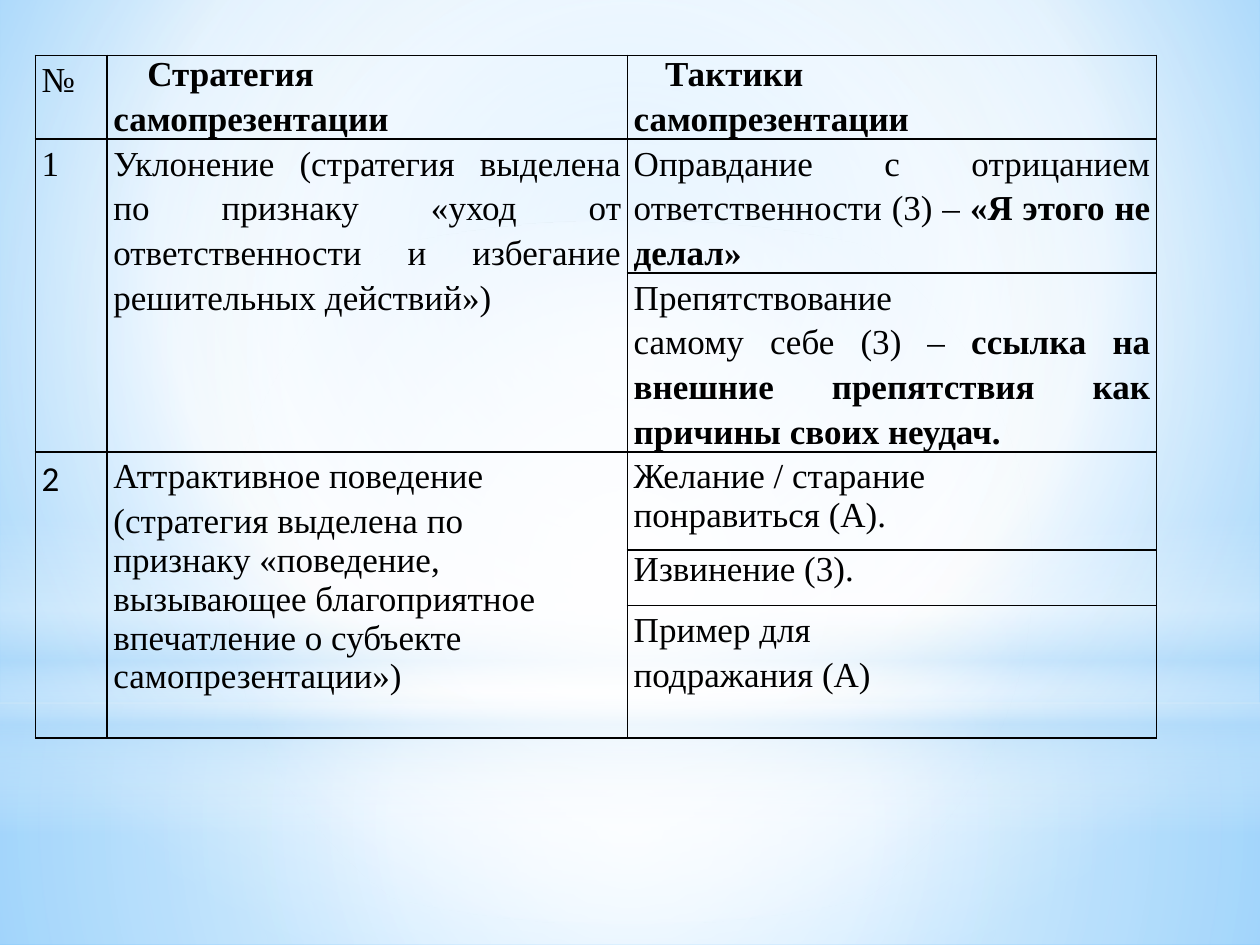
import pptx
import pptx.util
import pptx.dml.color
import pptx.enum.shapes
import pptx.enum.text
import pptx.oxml
import pptx.oxml.ns

Inches = pptx.util.Inches
SHAPE = pptx.enum.shapes.MSO_SHAPE
ALIGN = pptx.enum.text.PP_ALIGN
THEME = {
    "text": "000000", "border": "000000", "white": "FFFFFF", "pale": "B4DCFA",
    "sky": "9ED5FF", "blue": "5BB9FF",
    "font": "Times New Roman", "number_font": "Calibri", "size": 20, "line": 1,
}
NS = pptx.oxml.ns.nsdecls("a")


def set_gradient(fill, element, stops, direction):
    fill.gradient()
    old = element.find(".//" + pptx.oxml.ns.qn("a:gradFill"))
    gs = "".join(
        f'<a:gs pos="{pos * 1000}"><a:srgbClr val="{THEME[color]}">'
        f'<a:alpha val="{alpha * 1000}"/></a:srgbClr></a:gs>'
        for pos, color, alpha in stops)
    new = pptx.oxml.parse_xml(
        f'<a:gradFill {NS} rotWithShape="1"><a:gsLst>{gs}</a:gsLst>{direction}</a:gradFill>')
    old.getparent().replace(old, new)


def circle(l, t, r, b):
    return (f'<a:path path="circle"><a:fillToRect l="{l * 1000}" t="{t * 1000}" '
            f'r="{r * 1000}" b="{b * 1000}"/></a:path>')


prs = pptx.Presentation()
prs.slide_width = Inches(10)
prs.slide_height = Inches(7.5)
s = prs.slides.add_slide(prs.slide_layouts[6])
set_gradient(s.background.fill, s.element,
             [(0, "sky", 100), (60, "white", 100), (100, "blue", 100)],
             circle(20, 10, 20, 60))

center = circle(50, 50, 50, 50)
glows = [
    (SHAPE.RECTANGLE, 5.58, 1.92, center,
     [(0, "white", 91), (37, "white", 76), (100, "pale", 79)]),
    (SHAPE.RECTANGLE, 0, 5.58, center,
     [(0, "white", 89), (48, "white", 62), (100, "pale", 79)]),
    (SHAPE.RECTANGLE, 4.12, 2.5, '<a:lin ang="5400000" scaled="0"/>',
     [(0, "white", 0), (29, "white", 30), (45, "pale", 40),
      (55, "white", 26), (65, "pale", 60), (100, "white", 0)]),
    (SHAPE.OVAL, 1.75, 5.58, center, [(0, "white", 100), (56, "white", 0)]),
]
for kind, top, height, direction, stops in glows:
    sp = s.shapes.add_shape(kind, 0, Inches(top), Inches(10), Inches(height))
    sp.shadow.inherit = False
    sp.line.fill.background()
    set_gradient(sp.fill, sp.element, stops, direction)

widths = [0.57, 4.13, 4.2]
heights = [0.66, 1.06, 1.42, 0.78, 0.44, 1.05]
tbl = s.shapes.add_table(len(heights), len(widths), Inches(0.28), Inches(0.44),
                         Inches(sum(widths)), Inches(sum(heights))).table
tbl.first_row = False
tbl.horz_banding = False
for col, width in zip(tbl.columns, widths):
    col.width = Inches(width)
for row, height in zip(tbl.rows, heights):
    row.height = Inches(height)
for first, last in [(1, 2), (3, 5)]:
    for c in range(2):
        tbl.cell(first, c).merge(tbl.cell(last, c))

for cell in tbl.iter_cells():
    cell.margin_left = cell.margin_right = Inches(0.05)
    cell.margin_top = cell.margin_bottom = 0
    tcPr = cell._tc.get_or_add_tcPr()
    for side in ("lnL", "lnR", "lnT", "lnB"):
        tcPr.append(pptx.oxml.parse_xml(
            f'<a:{side} {NS} w="{pptx.util.Pt(THEME["line"])}"><a:solidFill>'
            f'<a:srgbClr val="{THEME["border"]}"/></a:solidFill></a:{side}>'))
    cell.fill.background()

J, L = ALIGN.JUSTIFY, ALIGN.LEFT
cells = {
    (0, 0): [(J, 1.15, 0, "№", "")],
    (0, 1): [(L, 1, 0.27, "", "Стратегия"), (J, 1.15, 0, "", "самопрезентации")],
    (0, 2): [(L, 1, 0.25, "", "Тактики"), (J, 1.15, 0, "", "самопрезентации")],
    (1, 0): [(J, 1.15, 0, "1", "")],
    (1, 1): [(J, 1.15, 0, "Уклонение (стратегия выделена по признаку «уход от "
              "ответственности и избегание решительных действий»)", "")],
    (1, 2): [(J, 1.15, 0, "Оправдание с отрицанием ответственности (3) – ",
              "«Я этого не делал»")],
    (2, 2): [(L, 1.15, 0, "Препятствование", ""),
             (J, 1.15, 0, "самому себе (3) – ",
              "ссылка на внешние препятствия как причины своих неудач.")],
    (3, 0): [(J, 1.15, 0, "2", "")],
    (3, 1): [(L, 1.15, 0, "Аттрактивное поведение", ""),
             (L, 1.15, 0, "(стратегия выделена по", ""),
             (L, 1, 0, "признаку «поведение, вызывающее благоприятное "
              "впечатление о субъекте самопрезентации»)", "")],
    (3, 2): [(L, 1.15, 0, "Желание / старание", ""),
             (L, 1, 0, "понравиться (А).", "")],
    (4, 2): [(L, 1, 0, "Извинение (3).", "")],
    (5, 2): [(L, 1.15, 0, "Пример для", ""), (L, 1.15, 0, "подражания (А)", "")],
}
for (row, col), paragraphs in cells.items():
    tf = tbl.cell(row, col).text_frame
    for i, (align, spacing, indent, plain, strong) in enumerate(paragraphs):
        p = tf.paragraphs[0] if i == 0 else tf.add_paragraph()
        p.alignment = align
        p.line_spacing = spacing
        if indent:
            p._p.get_or_add_pPr().set("marL", str(Inches(indent)))
        for text, bold in ((plain, False), (strong, True)):
            if text:
                r = p.add_run()
                r.text = text
                r.font.bold = bold
                r.font.size = pptx.util.Pt(THEME["size"])
                r.font.name = THEME["number_font" if text == "2" else "font"]
                r.font.color.rgb = pptx.dml.color.RGBColor.from_string(THEME["text"])

prs.save("out.pptx")
